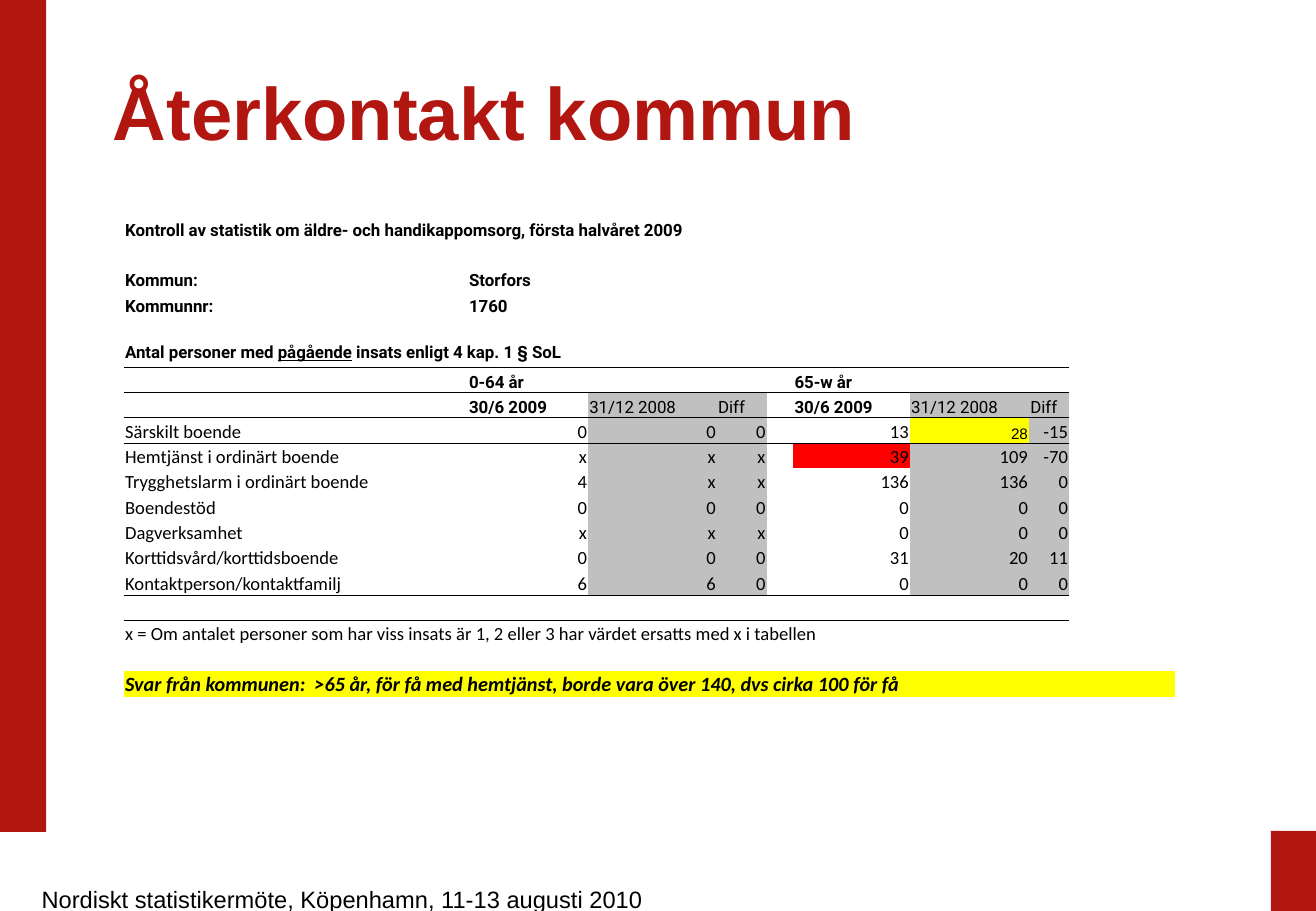
from lxml import etree
from pptx import Presentation
from pptx.dml.color import RGBColor
from pptx.enum.shapes import MSO_SHAPE
from pptx.enum.text import MSO_ANCHOR, PP_ALIGN
from pptx.oxml.ns import qn
from pptx.util import Inches, Pt

RECT = MSO_SHAPE.RECTANGLE
TOP, MIDDLE, BOTTOM = MSO_ANCHOR.TOP, MSO_ANCHOR.MIDDLE, MSO_ANCHOR.BOTTOM
LEFT, RIGHT = PP_ALIGN.LEFT, PP_ALIGN.RIGHT
COLORS = {"red": "B21611", "black": "000000", "gray": "C0C0C0",
          "yellow": "FFFF00", "alert": "FF0000"}
PLAIN_STYLE = "{2D5ABB26-0587-4C30-8999-92F81FD0307C}"

HEAD = ("Roboto", 10, True)
THIN = ("Roboto", 10, False)
BODY = ("Calibri", 11, False)
SMALL = ("Arial", 9, False)
REPLY = ("Calibri", 12, True)

WIDTHS = [2.83, 0.99, 1.06, 0.41, 0.22, 0.96, 0.98, 0.33, 0.87]
ROWS = 19
GROUPS = {1: "0-64 år", 5: "65-w år"}  # first column of each age group
PERIODS = ["30/6 2009", "31/12 2008", "Diff"]
FIRST = 8  # first data row
DATA = [
    ("Särskilt boende", "0 0 0", "13 28 -15"),
    ("Hemtjänst i ordinärt boende", "x x x", "39 109 -70"),
    ("Trygghetslarm i ordinärt boende", "4 x x", "136 136 0"),
    ("Boendestöd", "0 0 0", "0 0 0"),
    ("Dagverksamhet", "x x x", "0 0 0"),
    ("Korttidsvård/korttidsboende", "0 0 0", "31 20 11"),
    ("Kontaktperson/kontaktfamilj", "6 6 0", "0 0 0"),
]
RULES = {5: 0, 6: 1, 7: 0, 14: 0}  # row above the line: first column
MARKS = {(8, 6): "yellow", (9, 5): "alert", (18, 0): "yellow"}


def rgb(name):
    return RGBColor.from_string(COLORS[name])


def style(para, look, color="black", align=LEFT):
    para.alignment = align
    for run in para.runs:
        font = run.font
        font.name, font.size, font.bold = look[0], Pt(look[1]), look[2]
        font.color.rgb = rgb(color)


def bar(slide, x, y, w, h):
    shape = slide.shapes.add_shape(RECT, Inches(x), Inches(y), Inches(w), Inches(h))
    shape.shadow.inherit = False
    shape.fill.solid()
    shape.fill.fore_color.rgb = rgb("red")
    shape.line.fill.background()


def label(slide, x, y, w, h, text, look, color, align, anchor):
    box = slide.shapes.add_textbox(Inches(x), Inches(y), Inches(w), Inches(h))
    frame = box.text_frame
    frame.word_wrap = True
    frame.vertical_anchor = anchor
    frame.text = text
    style(frame.paragraphs[0], look, color, align)
    return frame.paragraphs[0]


def edge(cell, side):
    """Draw a thin black line on one side of a cell."""
    line = etree.SubElement(cell._tc.get_or_add_tcPr(), qn("a:" + side), w=str(Pt(0.5)))
    fill = etree.SubElement(line, qn("a:solidFill"))
    etree.SubElement(fill, qn("a:srgbClr"), val=COLORS["black"])


def prepare(table):
    """Give every cell its margins, lines, fill and small empty text."""
    for r in range(ROWS):
        for c in range(len(WIDTHS)):
            cell = table.cell(r, c)
            cell.margin_left = cell.margin_right = cell.margin_top = Inches(0.01)
            cell.margin_bottom = 0
            cell.vertical_anchor = TOP if r == 5 else BOTTOM
            for side, row in (("lnT", r - 1), ("lnB", r)):
                if row in RULES and RULES[row] <= c <= 7:
                    edge(cell, side)
            shaded = 7 <= r <= 14 and c in (2, 3, 6, 7)
            color = MARKS.get((r, c), "gray" if shaded else None)
            if color:
                cell.fill.solid()
                cell.fill.fore_color.rgb = rgb(color)
            else:
                cell.fill.background()
            para = cell.text_frame.paragraphs[0]
            etree.SubElement(para._p, qn("a:endParaRPr"), sz="1000")


def write(table, row, col, text, look, align=LEFT, span=1):
    cell = table.cell(row, col)
    if span > 1:
        cell.merge(table.cell(row, col + span - 1))
    para = cell.text_frame.paragraphs[0]
    para.text = text
    style(para, look, align=align)
    return para


def stats(slide, x, y, w, h):
    frame = slide.shapes.add_table(ROWS, len(WIDTHS), Inches(x), Inches(y),
                                   Inches(w), Inches(h))
    table = frame.table
    table.first_row = table.horz_banding = False
    table._tbl.tblPr.find(qn("a:tableStyleId")).text = PLAIN_STYLE
    for col, width in zip(table.columns, WIDTHS):
        col.width = Inches(width)
    for row in table.rows:
        row.height = Inches(h) // ROWS
    prepare(table)

    write(table, 0, 0, "Kontroll av statistik om äldre- och handikappomsorg, "
          "första halvåret 2009", HEAD, span=7)
    for row, (key, value) in enumerate(
            [("Kommun:", "Storfors"), ("Kommunnr:", "1760")], 2):
        write(table, row, 0, key, HEAD)
        write(table, row, 1, value, HEAD)

    intro = write(table, 5, 0, "Antal personer med ", HEAD, span=5)
    intro.add_run().text = "pågående"
    intro.add_run().text = " insats enligt 4 kap. 1 § SoL"
    style(intro, HEAD)
    intro.runs[1].font.underline = True

    for col, group in GROUPS.items():
        write(table, 6, col, group, HEAD, span=3)
        for i, period in enumerate(PERIODS):
            write(table, 7, col + i, period, THIN if i else HEAD)

    for row, (name, *parts) in enumerate(DATA, FIRST):
        write(table, row, 0, name, BODY)
        for start, part in zip(GROUPS, parts):
            for col, value in enumerate(part.split(), start):
                look = SMALL if (row, col) == (8, 6) else BODY
                write(table, row, col, value, look, RIGHT)

    write(table, 16, 0, "x = Om antalet personer som har viss insats är 1, 2 eller 3 "
          "har värdet ersatts med x i tabellen", BODY, span=8)
    reply = write(table, 18, 0, "Svar från kommunen:  >65 år, för få med hemtjänst, "
                  "borde vara över 140, dvs cirka 100 för få", REPLY, span=9)
    reply.runs[0].font.italic = True


def main():
    prs = Presentation()
    prs.slide_width, prs.slide_height = Inches(10.83), Inches(7.5)
    slide = prs.slides.add_slide(prs.slide_layouts[6])
    bar(slide, 0, 0, 0.38, 6.85)
    bar(slide, 10.46, 6.84, 0.37, 0.66)
    label(slide, 0, 7.24, 5.39, 0.26,
          "Nordiskt statistikermöte, Köpenhamn, 11-13 augusti 2010",
          ("Arial", 14, False), "black", RIGHT, TOP)
    stats(slide, 1.02, 1.77, 8.63, 3.97)
    title = label(slide, 0.83, 0.33, 9.21, 1.25, "Återkontakt kommun",
                  ("Arial", 44, True), "red", LEFT, MIDDLE)
    title.line_spacing = 0.9
    prs.save("out.pptx")


if __name__ == "__main__":
    main()
